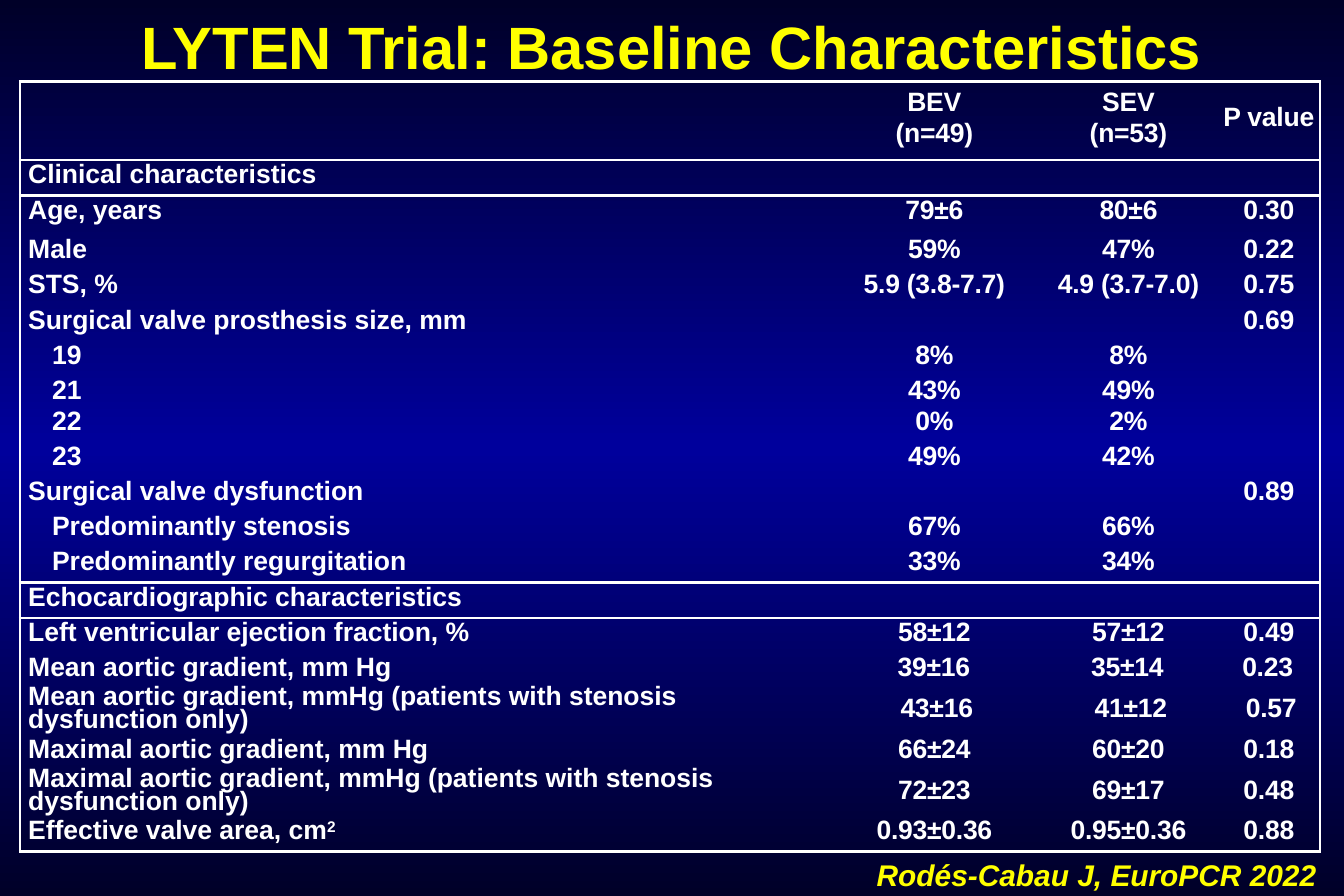
from copy import deepcopy
from dataclasses import dataclass

from lxml.etree import SubElement
from pptx import Presentation
from pptx.dml.color import RGBColor as Color
from pptx.enum.text import MSO_ANCHOR as Anchor, MSO_AUTO_SIZE as AutoSize, PP_ALIGN as Align
from pptx.oxml.ns import qn
from pptx.util import Inches, Pt


@dataclass(frozen=True)
class Theme:
    font: str = "Arial"
    edge: Color = Color.from_string("000028")
    glow: Color = Color.from_string("00009C")
    heading: Color = Color.from_string("FFFF00")
    body: Color = Color.from_string("FFFFFF")
    title_size: int = 36
    citation_size: int = 18
    table_size: int = 16
    rule_width: float = 1.5
    plain_table: str = "{2D5ABB26-0587-4C30-8999-92F81FD0307C}"


THEME = Theme()
WIDTH, HEIGHT = Inches(11.25), Inches(7.5)

# Left, top, width and height in percent of the slide
TITLE_BOX = (0, 0.4, 100, 9.47)
TABLE_BOX = (1.48, 9.1, 96.71, 86)
CITATION_BOX = (64.36, 94.93, 35.64, 5.07)

# Relative sizes of columns and rows
COLUMNS = (6.76, 1.78, 1.46, 0.88)
HEADER_ROW, SINGLE_ROW, DOUBLE_ROW = 0.66, 0.295, 0.39

# Left insets in inches
LABEL_INSET, SUBLABEL_INSET = 0.07, 0.27
VALUE_INSETS = (0.01, 0.02, 0.03)

# Label, BEV, SEV, P value
HEADER = ("", "BEV\n(n=49)", "SEV\n(n=53)", "P value")
ROWS = [
    ("Clinical characteristics", "", "", ""),
    ("Age, years", "79±6", "80±6", "0.30"),
    ("Male", "59%", "47%", "0.22"),
    ("STS, %", "5.9 (3.8-7.7)", "4.9 (3.7-7.0)", "0.75"),
    ("Surgical valve prosthesis size, mm", "", "", "0.69"),
    ("19", "8%", "8%", ""),
    ("21", "43%", "49%", ""),
    ("22", "0%", "2%", ""),
    ("23", "49%", "42%", ""),
    ("Surgical valve dysfunction", "", "", "0.89"),
    ("Predominantly stenosis", "67%", "66%", ""),
    ("Predominantly regurgitation", "33%", "34%", ""),
    ("Echocardiographic characteristics", "", "", ""),
    ("Left ventricular ejection fraction, %", "58±12", "57±12", "0.49"),
    ("Mean aortic gradient, mm Hg", "39±16", "35±14", "0.23"),
    ("Mean aortic gradient, mmHg (patients with stenosis dysfunction only)",
     "43±16", "41±12", "0.57"),
    ("Maximal aortic gradient, mm Hg", "66±24", "60±20", "0.18"),
    ("Maximal aortic gradient, mmHg (patients with stenosis dysfunction only)",
     "72±23", "69±17", "0.48"),
    ("Effective valve area, cm^2", "0.93±0.36", "0.95±0.36", "0.88"),
]
SECTION_ROWS = (1, 13)
SUBLABEL_ROWS = (6, 7, 8, 9, 11, 12)
DOUBLE_ROWS = (16, 18)
NATURAL_SPACING_ROWS = range(3, 8)
ROW_NUDGES = {15: -0.02, 16: 0.04}


def place(box):
    left, top, width, height = box
    return [int(share * side / 100) for share, side in
            ((left, WIDTH), (top, HEIGHT), (width, WIDTH), (height, HEIGHT))]


def apply(target, values):
    for name, value in values.items():
        setattr(target, name, value)


def format_font(font, size, color, italic=False):
    apply(font, {"name": THEME.font, "size": Pt(size), "bold": True, "italic": italic})
    font.color.rgb = color


def paint_background(slide):
    fill = slide.background.fill
    fill.gradient()
    fill.gradient_angle = 90
    first = fill.gradient_stops[0]._gs
    first.addnext(deepcopy(first))
    colors = (THEME.edge, THEME.glow, THEME.edge)
    for stop, position, color in zip(fill.gradient_stops, (0, 0.5, 1), colors):
        stop.position = position
        stop.color.rgb = color


def add_title(slide, text):
    title = slide.shapes.title
    apply(title, dict(zip(("left", "top", "width", "height"), place(TITLE_BOX))))
    frame = title.text_frame
    frame.text = text
    apply(frame, {"auto_size": AutoSize.NONE, "word_wrap": True,
                  "vertical_anchor": Anchor.MIDDLE})
    paragraph = frame.paragraphs[0]
    paragraph.alignment = Align.CENTER
    format_font(paragraph.runs[0].font, THEME.title_size, THEME.heading)


def add_citation(slide, text):
    frame = slide.shapes.add_textbox(*place(CITATION_BOX)).text_frame
    frame.text = text
    frame.word_wrap = True
    format_font(frame.paragraphs[0].runs[0].font, THEME.citation_size, THEME.heading, True)


def draw_borders(cell, row, column, last_row):
    rule_above = row == 0 or row in SECTION_ROWS or row - 1 in SECTION_ROWS
    rule_below = row in (0, last_row) or row in SECTION_ROWS or row + 1 in SECTION_ROWS
    edges = {"a:lnL": column == 0, "a:lnR": column == len(COLUMNS) - 1,
             "a:lnT": rule_above, "a:lnB": rule_below}
    properties = cell._tc.get_or_add_tcPr()
    for tag, visible in edges.items():
        line = SubElement(properties, qn(tag), w=str(Pt(THEME.rule_width)))
        if visible:
            solid = SubElement(line, qn("a:solidFill"))
            SubElement(solid, qn("a:srgbClr"), val=str(THEME.body))
        else:
            SubElement(line, qn("a:noFill"))


def line_spacing(row, last_row, index):
    if row in NATURAL_SPACING_ROWS or index:
        return None
    return Pt(13.1 if row == last_row else 14)


def fill_cell(cell, text, row, column, last_row):
    if column:
        inset = max(0, VALUE_INSETS[column - 1] + ROW_NUDGES.get(row, 0))
    else:
        inset = SUBLABEL_INSET if row in SUBLABEL_ROWS else LABEL_INSET
    top = 0.02 if text and row in NATURAL_SPACING_ROWS else 0
    apply(cell, {"margin_left": Inches(inset), "margin_right": 0,
                 "margin_top": Inches(top), "margin_bottom": 0,
                 "vertical_anchor": Anchor.MIDDLE})
    base, _, superscript = text.partition("^")
    cell.text = base
    for index, paragraph in enumerate(cell.text_frame.paragraphs):
        apply(paragraph, {"alignment": Align.CENTER if column else Align.LEFT,
                          "line_spacing": line_spacing(row, last_row, index)})
        if index:
            paragraph.space_before = Pt(1)
        if superscript:
            raised = paragraph.add_run()
            raised.text = superscript
            raised._r.get_or_add_rPr().set("baseline", "24000")
        for run in paragraph.runs:
            format_font(run.font, THEME.table_size, THEME.body)
            if column:
                run._r.get_or_add_rPr().set("spc", "-15")
        if not text:
            # An empty cell must not stretch its row
            SubElement(paragraph._p, qn("a:endParaRPr"), sz=str(THEME.table_size * 100))


def add_characteristics_table(slide):
    rows = [HEADER, *ROWS]
    last_row = len(rows) - 1
    box = place(TABLE_BOX)
    table = slide.shapes.add_table(len(rows), len(COLUMNS), *box).table
    apply(table, {"first_row": False, "horz_banding": False})
    table._tbl.tblPr.find(qn("a:tableStyleId")).text = THEME.plain_table

    # Share the width and height out by weight
    for column, weight in zip(table.columns, COLUMNS):
        column.width = int(box[2] * weight / sum(COLUMNS))
    weights = [HEADER_ROW] + [DOUBLE_ROW if row in DOUBLE_ROWS else SINGLE_ROW
                              for row in range(1, len(rows))]
    for table_row, weight in zip(table.rows, weights):
        table_row.height = int(box[3] * weight / sum(weights))

    for row, texts in enumerate(rows):
        for column, text in enumerate(texts):
            cell = table.cell(row, column)
            fill_cell(cell, text, row, column, last_row)
            draw_borders(cell, row, column, last_row)
            cell.fill.background()


def main():
    presentation = Presentation()
    apply(presentation, {"slide_width": WIDTH, "slide_height": HEIGHT})
    slide = presentation.slides.add_slide(presentation.slide_layouts.get_by_name("Title Only"))
    paint_background(slide)
    add_title(slide, "LYTEN Trial: Baseline Characteristics")
    add_citation(slide, "Rodés-Cabau J, EuroPCR 2022")
    add_characteristics_table(slide)
    presentation.save("out.pptx")


if __name__ == "__main__":
    main()
